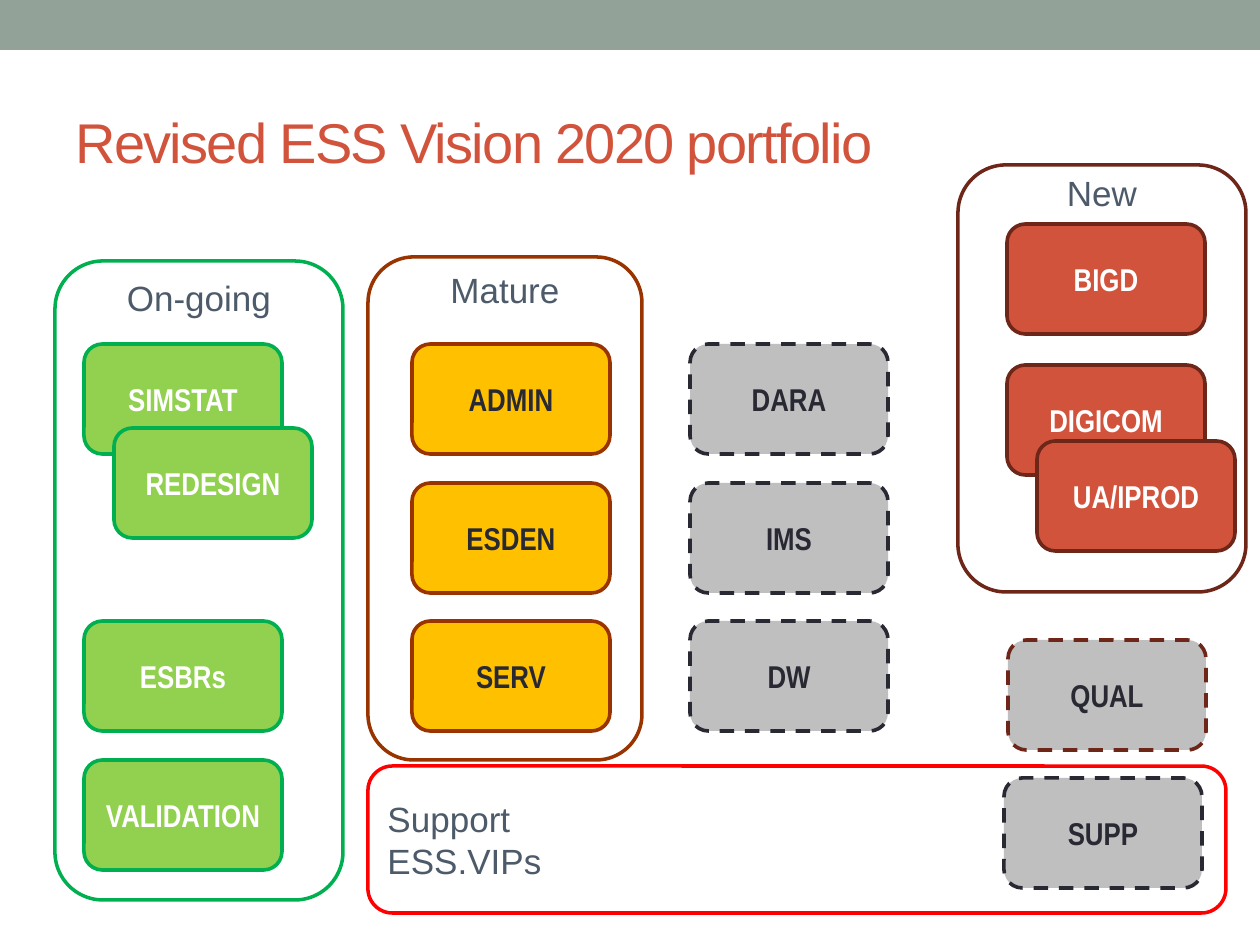
from pptx import Presentation
from pptx.dml.color import RGBColor
from pptx.enum.dml import MSO_LINE
from pptx.enum.shapes import MSO_SHAPE
from pptx.enum.text import MSO_ANCHOR, PP_ALIGN
from pptx.util import Pt

SCALE = 914400 / 126
WHITE = RGBColor(0xFF, 0xFF, 0xFF)
SAGE = RGBColor(0x93, 0xA2, 0x99)
SLATE = RGBColor(0x4C, 0x5A, 0x6A)
INK = RGBColor(0x29, 0x29, 0x34)
BRICK = RGBColor(0xD2, 0x53, 0x3C)
MAROON = RGBColor(0x6E, 0x26, 0x19)
LIME = RGBColor(0x92, 0xD0, 0x50)
GREEN = RGBColor(0x00, 0xB0, 0x50)
AMBER = RGBColor(0xFF, 0xC0, 0x00)
BROWN = RGBColor(0x99, 0x33, 0x00)
GRAY = RGBColor(0xBF, 0xBF, 0xBF)
RED = RGBColor(0xFF, 0x00, 0x00)

BOX_W, BOX_H = 198, 110
ROWS = [344, 483, 621, 760]


def px(n):
    return round(n * SCALE)


def write(shape, text, font, size, color, align, bold=False):
    frame = shape.text_frame
    frame.word_wrap = True
    frame.text = text
    for para in frame.paragraphs:
        para.alignment = align
        for run in para.runs:
            run.font.name = font
            run.font.size = Pt(size)
            run.font.bold = bold
            run.font.color.rgb = color
    return frame


def add_shape(slide, kind, area, fill=None, line=None, width=2):
    shape = slide.shapes.add_shape(kind, *map(px, area))
    shape.shadow.inherit = False
    if fill is None:
        shape.fill.background()
    else:
        shape.fill.solid()
        shape.fill.fore_color.rgb = fill
    if line is None:
        shape.line.fill.background()
    else:
        shape.line.color.rgb = line
        shape.line.width = Pt(width)
    return shape


def add_title(slide, text):
    box = slide.shapes.add_textbox(px(63), px(73), px(1134), px(136))
    frame = write(box, text, "Arial", 32, BRICK, PP_ALIGN.LEFT)
    frame.vertical_anchor = MSO_ANCHOR.MIDDLE
    frame.paragraphs[0].runs[0].font._element.set("spc", "-100")


def add_group(slide, text, area, line, inset):
    shape = add_shape(slide, MSO_SHAPE.ROUNDED_RECTANGLE, area, line=line)
    frame = write(shape, text, "Arial", 20, SLATE, PP_ALIGN.CENTER)
    frame.vertical_anchor = MSO_ANCHOR.TOP
    frame.margin_top = px(inset)


def add_support(slide, text):
    area = (368, 766, 858, 147)
    shape = add_shape(slide, MSO_SHAPE.ROUNDED_RECTANGLE, area, line=RED)
    frame = write(shape, text, "Arial", 20, SLATE, PP_ALIGN.LEFT)
    frame.vertical_anchor = MSO_ANCHOR.MIDDLE


def add_box(slide, text, left, top, fill, line, color, dash=False):
    area = (left, top, BOX_W, BOX_H)
    shape = add_shape(slide, MSO_SHAPE.ROUNDED_RECTANGLE, area, fill, line, 2.08)
    if dash:
        shape.line.dash_style = MSO_LINE.DASH
    frame = write(shape, text, "Arial Narrow", 18, color, PP_ALIGN.CENTER, True)
    frame.vertical_anchor = MSO_ANCHOR.MIDDLE
    frame.margin_left = frame.margin_right = 0


def main():
    deck = Presentation()
    deck.slide_width, deck.slide_height = px(1260), px(945)
    slide = deck.slides.add_slide(deck.slide_layouts[6])

    add_shape(slide, MSO_SHAPE.RECTANGLE, (0, 0, 1260, 50), SAGE)
    add_group(slide, "New", (958, 165, 288, 427), MAROON, -8)
    add_group(slide, "On-going", (55, 261, 288, 639), GREEN, 1)
    add_group(slide, "Mature", (368, 257, 274, 503), BROWN, -2)
    add_title(slide, "Revised ESS Vision 2020 portfolio")
    add_support(slide, "Support\nESS.VIPs")

    for text, left, top in [
        ("SIMSTAT", 84, ROWS[0]),
        ("REDESIGN", 114, 428),
        ("ESBRs", 84, ROWS[2]),
        ("VALIDATION", 84, ROWS[3]),
    ]:
        add_box(slide, text, left, top, LIME, GREEN, WHITE)

    for text, top in zip(["ADMIN", "ESDEN", "SERV"], ROWS):
        add_box(slide, text, 412, top, AMBER, BROWN, INK)

    for text, top in zip(["DARA", "IMS", "DW"], ROWS):
        add_box(slide, text, 690, top, GRAY, INK, INK, True)

    for text, left, top in [
        ("BIGD", 1007, 224),
        ("DIGICOM", 1007, 365),
        ("UA/IPROD", 1037, 441),
    ]:
        add_box(slide, text, left, top, BRICK, MAROON, WHITE)

    add_box(slide, "QUAL", 1008, 640, GRAY, MAROON, INK, True)
    add_box(slide, "SUPP", 1004, 778, GRAY, INK, INK, True)

    deck.save("out.pptx")


if __name__ == "__main__":
    main()
